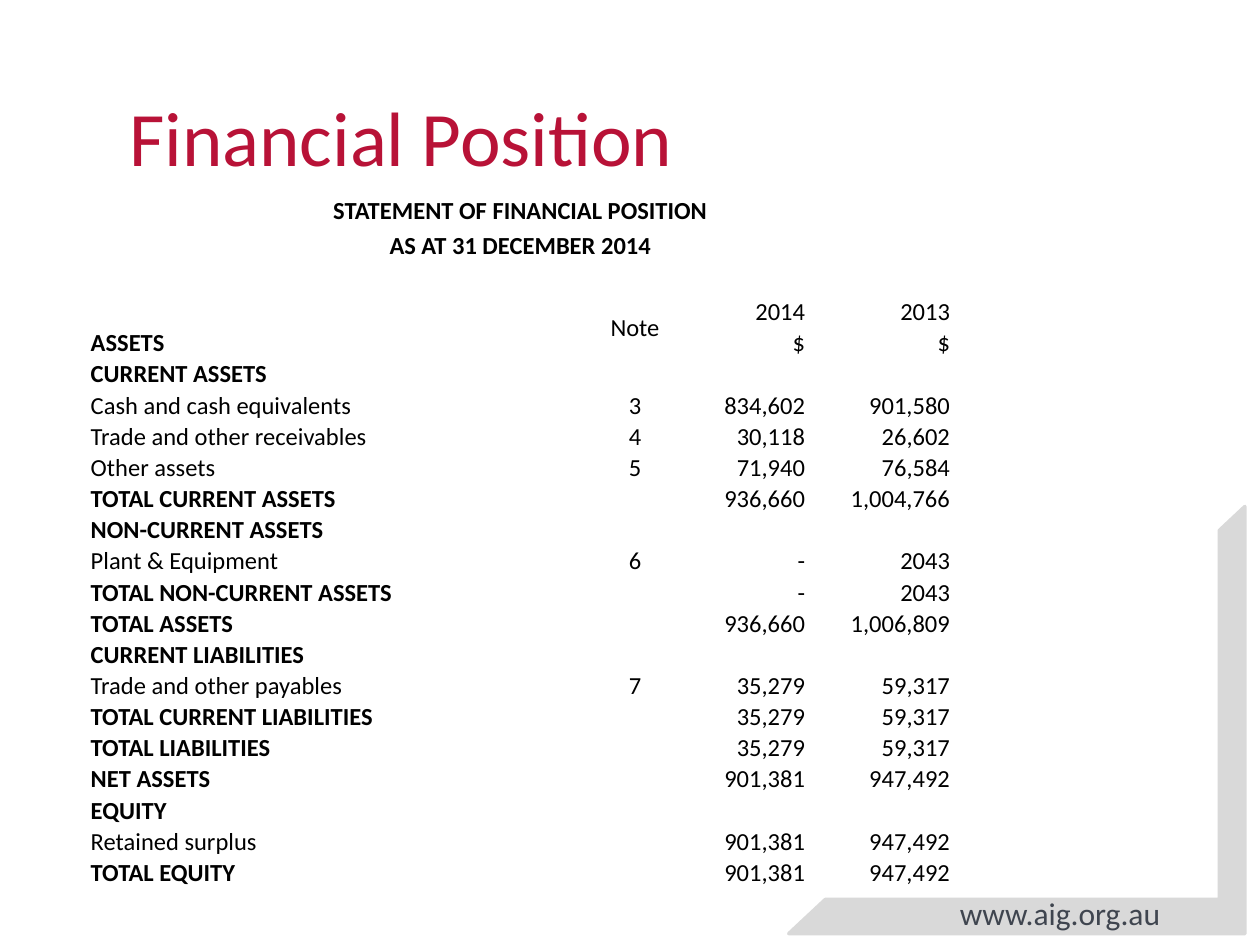
from dataclasses import dataclass

from lxml import etree
from pptx import Presentation
from pptx import util as u
from pptx.dml.color import RGBColor
from pptx.enum import shapes, text
from pptx.oxml import ns


@dataclass(frozen=True)
class Theme:
    font: str = "Calibri"
    title: str = "B81237"
    body: str = "000000"
    address: str = "3F454F"
    frame: str = "D9D9D9"
    border: str = "FFFFFF"
    title_size: int = 44
    address_size: int = 18
    body_size: int = 14


THEME = Theme()
LEFT, CENTER, RIGHT = text.PP_ALIGN.LEFT, text.PP_ALIGN.CENTER, text.PP_ALIGN.RIGHT

HEADINGS = ["STATEMENT OF FINANCIAL POSITION", "AS AT 31 DECEMBER 2014", ""]
STATEMENT = [
    ("", "Note", "2014", "2013"),
    ("ASSETS", "", "$", "$"),
    ("CURRENT ASSETS", "", "", ""),
    ("Cash and cash equivalents", "3", "834,602", "901,580"),
    ("Trade and other receivables", "4", "30,118", "26,602"),
    ("Other assets", "5", "71,940", "76,584"),
    ("TOTAL CURRENT ASSETS", "", "936,660", "1,004,766"),
    ("NON-CURRENT ASSETS", "", "", ""),
    ("Plant & Equipment", "6", "-", "2043"),
    ("TOTAL NON-CURRENT ASSETS", "", "-", "2043"),
    ("TOTAL ASSETS", "", "936,660", "1,006,809"),
    ("CURRENT LIABILITIES", "", "", ""),
    ("Trade and other payables", "7", "35,279", "59,317"),
    ("TOTAL CURRENT LIABILITIES", "", "35,279", "59,317"),
    ("TOTAL LIABILITIES", "", "35,279", "59,317"),
    ("NET ASSETS", "", "901,381", "947,492"),
    ("EQUITY", "", "", ""),
    ("Retained surplus", "", "901,381", "947,492"),
    ("TOTAL EQUITY", "", "901,381", "947,492"),
]
COLUMN_WIDTHS = [3.92, 0.9, 0.95, 0.2, 0.95]
COLUMN_ALIGNMENTS = [LEFT, CENTER, RIGHT, RIGHT, RIGHT]
TABLE_HEIGHT = 5.51
DATE_ROW_HEIGHT = 0.31


def inches(*lengths):
    return [u.Inches(length) for length in lengths]


def format_text(paragraph, size, color, alignment=LEFT, bold=False):
    paragraph.alignment = alignment
    for run in paragraph.runs:
        run.font.name = THEME.font
        run.font.size = u.Pt(size)
        run.font.bold = bold
        run.font.color.rgb = RGBColor.from_string(color)


def add_title(slide, wording):
    title = slide.shapes.title
    title.left, title.top, title.width, title.height = inches(0.5, 0.3, 5.37, 1.56)
    title.text_frame.text = wording
    title.text_frame.vertical_anchor = text.MSO_ANCHOR.MIDDLE
    format_text(title.text_frame.paragraphs[0], THEME.title_size, THEME.title, CENTER)


def add_corner_frame(slide):
    frame = slide.shapes.add_shape(
        shapes.MSO_SHAPE.HALF_FRAME, *inches(6.26, 4.02, 3.62, 3.39)
    )
    frame.rotation = 180
    frame.adjustments[0], frame.adjustments[1] = 0.08, 0.06
    frame.shadow.inherit = False
    frame.fill.solid()
    frame.fill.fore_color.rgb = RGBColor.from_string(THEME.frame)
    frame.line.color.rgb = RGBColor.from_string(THEME.frame)
    frame.line.width = u.Pt(2)


def add_address(slide, wording):
    box = slide.shapes.add_textbox(*inches(7.52, 7.05, 2.13, 0.4))
    box.text_frame.word_wrap = True
    box.text_frame.text = wording
    format_text(box.text_frame.paragraphs[0], THEME.address_size, THEME.address)


def set_borders(cell, bottom_width):
    properties = cell._tc.get_or_add_tcPr()
    widths = {"lnL": 1, "lnR": 1, "lnT": 1, "lnB": bottom_width}
    for position, (side, width) in enumerate(widths.items()):
        line = etree.Element(ns.qn(f"a:{side}"), w=str(u.Pt(width)))
        fill = etree.SubElement(line, ns.qn("a:solidFill"))
        etree.SubElement(fill, ns.qn("a:srgbClr"), val=THEME.border)
        properties.insert(position, line)


def format_cell(cell, alignment, bold, bottom_width=1):
    cell.margin_left = cell.margin_right = u.Inches(0.05)
    cell.margin_top = cell.margin_bottom = 0
    cell.vertical_anchor = text.MSO_ANCHOR.MIDDLE
    cell.fill.background()
    set_borders(cell, bottom_width)
    paragraph = cell.text_frame.paragraphs[0]
    format_text(paragraph, THEME.body_size, THEME.body, alignment, bold)
    if not paragraph.runs:
        size = str(THEME.body_size * 100)
        etree.SubElement(paragraph._p, ns.qn("a:endParaRPr"), sz=size)


def add_statement(slide):
    rows = [(heading, "", "", "", "") for heading in HEADINGS]
    rows += [(label, note, now, "", before) for label, note, now, before in STATEMENT]
    table = slide.shapes.add_table(
        len(rows), len(COLUMN_WIDTHS),
        *inches(0.67, 1.55, sum(COLUMN_WIDTHS), TABLE_HEIGHT),
    ).table
    table.first_row = table.horz_banding = False
    for column, width in zip(table.columns, COLUMN_WIDTHS):
        column.width = u.Inches(width)
    row_height = (TABLE_HEIGHT - DATE_ROW_HEIGHT) / (len(rows) - 1)
    for index, values in enumerate(rows):
        table.rows[index].height = u.Inches(DATE_ROW_HEIGHT if index == 1 else row_height)
        is_heading = index < len(HEADINGS)
        for number, value in enumerate(values):
            cell = table.cell(index, number)
            cell.text_frame.text = value
            alignment = CENTER if is_heading else COLUMN_ALIGNMENTS[number]
            bold = number == 0 and value.isupper()
            format_cell(cell, alignment, bold, 3 if index == 0 else 1)
        if is_heading:
            table.cell(index, 0).merge(table.cell(index, len(values) - 1))
    first = len(HEADINGS)
    for number in (1, 3):
        table.cell(first, number).merge(table.cell(first + 1, number))


def main():
    presentation = Presentation()
    presentation.slide_width, presentation.slide_height = inches(10, 7.5)
    slide = presentation.slides.add_slide(presentation.slide_layouts[5])
    add_corner_frame(slide)
    add_address(slide, "www.aig.org.au")
    add_title(slide, "Financial Position")
    add_statement(slide)
    presentation.save("out.pptx")


if __name__ == "__main__":
    main()
